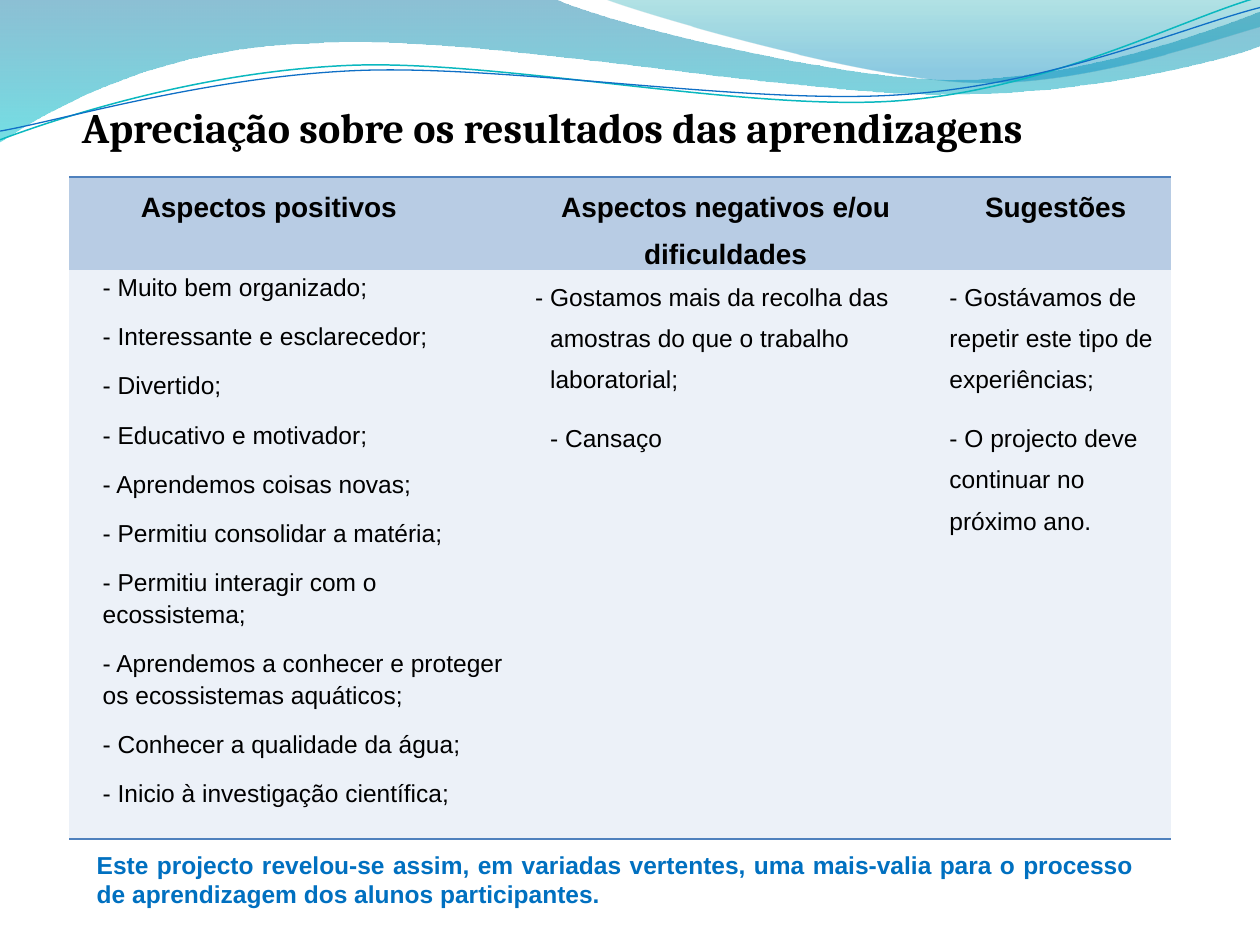
from dataclasses import dataclass

from lxml.etree import SubElement
from pptx import Presentation
from pptx.dml.color import RGBColor as RGB
from pptx.enum.text import MSO_ANCHOR as Anchor, MSO_AUTO_SIZE as AutoSize, PP_ALIGN as Align
from pptx.oxml import parse_xml
from pptx.oxml.ns import nsdecls, qn
from pptx.util import Pt


@dataclass(frozen=True)
class Theme:
    heading_font: str = "Cambria"
    body_font: str = "Arial"
    title_size: int = 24
    header_size: int = 16
    body_size: int = 14
    text: str = "000000"
    closing: str = "0070C0"
    rule: str = "4F81BD"
    header_fill: str = "B8CCE4"
    body_fill: str = "ECF1F8"
    wide_wave: tuple = ((0, "0074A1", 45), (1, "00C6CF", 55))
    right_wave: tuple = ((0, "00A1A9", 30), (0.8, "008BBF", 45))
    teal_line: str = "0AB8BF"
    blue_line: str = "0F6FC6"


THEME = Theme()

WIDE_WAVE = [
    (0, 0), (316.8, -0.7),
    (342.7, 12.2, 478.1, 45.4, 545.8, 45.4), (614.2, 45.4, 689.8, 18.7, 720, 6.5),
    (720.7, 25.9), (707.8, 31.7, 626.4, 54.7, 537.1, 54),
    (447.8, 54, 275, 20.2, 185, 24.5), (92.9, 25.9, 33.1, 59.8, -0.7, 81.4),
]
RIGHT_WAVE = [
    (344.9, -0.7), (366.5, 7.9, 491, 44.6, 553.7, 46.8),
    (616.3, 49.7, 691.9, 23, 720, 15.1), (720, 0),
]
TEAL_LINE = [
    (0, 79.9), (34.6, 67, 113.8, 41, 199.4, 37.4),
    (284.4, 33.8, 427, 64.1, 513.4, 57.6), (599.8, 51.1, 675.4, 10.8, 718.6, -1.4),
]
BLUE_LINE = [
    (0, 74.9), (33.8, 69.1, 118.1, 43.9, 203.8, 40.3),
    (290.2, 36.7, 429.8, 60.5, 516.2, 54), (601.9, 48.2, 677.5, 15.1, 720, 4.3),
]

COLUMN_WIDTHS = (261.3, 228.2, 140.3)
ROW_HEIGHTS = (53, 325)
HEADERS = (
    ("Aspectos positivos", Align.LEFT, 36),
    ("Aspectos negativos e/ou dificuldades", Align.CENTER, 0),
    ("Sugestões", Align.CENTER, 8.6),
)
POSITIVES = [
    "- Muito bem organizado;",
    "- Interessante e esclarecedor;",
    "- Divertido;",
    "- Educativo e motivador;",
    "- Aprendemos coisas novas;",
    "- Permitiu consolidar a matéria;",
    "- Permitiu interagir com o ecossistema;",
    "- Aprendemos a conhecer e proteger os ecossistemas aquáticos;",
    "- Conhecer a qualidade da água;",
    "- Inicio à investigação científica;",
]
NEGATIVES = [
    "Gostamos mais da recolha das amostras do que o trabalho laboratorial;",
    "- Cansaço",
]
SUGGESTIONS = [
    "- Gostávamos de repetir este tipo de experiências;",
    "- O projecto deve continuar no próximo ano.",
]
BODY = ((POSITIVES, 14.2, 1.15), (NEGATIVES, 8.6, 1.5), (SUGGESTIONS, 8.6, 1.5))


def add_outline(slide, outline, close):
    """Draw a freeform of corners and cubic curves without a shadow."""
    start, *others = [
        (Pt(x), Pt(y)) for segment in outline for x, y in zip(segment[::2], segment[1::2])]
    builder = slide.shapes.build_freeform(*start)
    builder.add_line_segments(others, close=close)
    shape = builder.convert_to_shape()
    shape.shadow.inherit = False
    lines = iter(list(shape._element.iter(qn("a:lnTo"))))
    for segment in outline[1:]:
        first = next(lines)
        if len(segment) == 6:
            first.tag = qn("a:cubicBezTo")
            for line in (next(lines), next(lines)):
                first.append(line[0])
                line.getparent().remove(line)
    return shape


def add_wave(slide, outline, stops):
    """Draw a wave with a translucent downward gradient."""
    shape = add_outline(slide, outline, close=True)
    shape.line.fill.background()
    shape.fill.gradient()
    shape.fill.gradient_angle = 270
    for stop, (position, color, _) in zip(shape.fill.gradient_stops, stops):
        stop.position = position
        stop.color.rgb = RGB.from_string(color)
    colors = shape._element.spPr.iter(qn("a:srgbClr"))
    for element, (_, _, opacity) in zip(colors, stops):
        SubElement(element, qn("a:alpha"), val=str(opacity * 1000))


def add_wave_line(slide, outline, color, width):
    """Draw a thin curved line."""
    shape = add_outline(slide, outline, close=False)
    shape.fill.background()
    shape.line.color.rgb = RGB.from_string(color)
    shape.line.width = Pt(width)


def style(paragraph, size, color=THEME.text, bold=False, name=THEME.body_font, align=Align.LEFT):
    """Set the font and alignment of a paragraph."""
    paragraph.alignment = align
    font = paragraph.font
    font.name, font.size, font.bold = name, Pt(size), bold
    font.color.rgb = RGB.from_string(color)


def add_title(slide, text):
    """Place the title above the table and in front of the waves."""
    title = slide.shapes.title
    title.left, title.top, title.width, title.height = Pt(39.6), Pt(54.2), Pt(671.8), Pt(42)
    frame = title.text_frame
    frame.text = text
    frame.auto_size = AutoSize.NONE
    frame.vertical_anchor = Anchor.TOP
    paragraph = frame.paragraphs[0]
    paragraph.space_before = Pt(4.8)
    style(paragraph, THEME.title_size, bold=True, name=THEME.heading_font)
    slide.shapes._spTree.append(title._element)


def add_dash_bullet(paragraph, indent):
    """Hang a dash of the body size before a paragraph."""
    properties = paragraph._p.get_or_add_pPr()
    properties.set("indent", str(-Pt(indent)))
    SubElement(properties, qn("a:buFont"), typeface=THEME.body_font)
    SubElement(properties, qn("a:buChar"), char="-")
    font = paragraph.runs[0].font
    font.name, font.size = THEME.body_font, Pt(THEME.body_size)


def fill_cell(cell, texts, indent, spacing, fill, border, **font):
    """Write a cell's paragraphs and set its fill and one border."""
    cell.margin_left, cell.margin_right = Pt(5), Pt(5.4)
    cell.margin_top = cell.margin_bottom = 0
    cell.fill.solid()
    cell.fill.fore_color.rgb = RGB.from_string(fill)
    cell._tc.get_or_add_tcPr().insert(0, parse_xml(
        f'<a:{border} {nsdecls("a")} w="{Pt(1)}"><a:solidFill>'
        f'<a:srgbClr val="{THEME.rule}"/></a:solidFill></a:{border}>'))
    cell.text = "\n".join(texts)
    for paragraph in cell.text_frame.paragraphs:
        paragraph._p.get_or_add_pPr().set("marL", str(Pt(indent)))
        if paragraph.text == NEGATIVES[0]:
            add_dash_bullet(paragraph, indent)
        paragraph.line_spacing = spacing
        paragraph.space_after = Pt(10)
        style(paragraph, **font)


def add_review_table(slide):
    """Add the three-column table of opinions."""
    frame = slide.shapes.add_table(
        2, 3, Pt(39.5), Pt(101.1), Pt(sum(COLUMN_WIDTHS)), Pt(sum(ROW_HEIGHTS)))
    table = frame.table
    table._tbl.tblPr.find(qn("a:tableStyleId")).text = "{2D5ABB26-0587-4C30-8999-92F81FD0307C}"
    table.horz_banding = False
    for column, width in zip(table.columns, COLUMN_WIDTHS):
        column.width = Pt(width)
    for row, height in zip(table.rows, ROW_HEIGHTS):
        row.height = Pt(height)
    for index, (text, align, indent) in enumerate(HEADERS):
        fill_cell(table.cell(0, index), [text], indent, 1.5, THEME.header_fill, "lnT",
                  size=THEME.header_size, bold=True, align=align)
    for index, (texts, indent, spacing) in enumerate(BODY):
        fill_cell(table.cell(1, index), texts, indent, spacing, THEME.body_fill, "lnB",
                  size=THEME.body_size)


def add_closing(slide, text):
    """Add the justified closing statement."""
    frame = slide.shapes.add_textbox(Pt(48.2), Pt(482), Pt(607), Pt(41)).text_frame
    frame.word_wrap = True
    frame.vertical_anchor = Anchor.MIDDLE
    frame.text = text
    style(frame.paragraphs[0], THEME.body_size, THEME.closing, bold=True, align=Align.JUSTIFY)


def main():
    """Build and save the slide."""
    presentation = Presentation()
    presentation.slide_width, presentation.slide_height = Pt(720), Pt(540)
    slide = presentation.slides.add_slide(presentation.slide_layouts[5])
    add_wave(slide, WIDE_WAVE, THEME.wide_wave)
    add_wave(slide, RIGHT_WAVE, THEME.right_wave)
    add_wave_line(slide, TEAL_LINE, THEME.teal_line, 0.85)
    add_wave_line(slide, BLUE_LINE, THEME.blue_line, 0.75)
    add_title(slide, "Apreciação sobre os resultados das aprendizagens")
    add_review_table(slide)
    add_closing(slide, "Este projecto revelou-se assim, em variadas vertentes, uma mais-valia "
                       "para o processo de aprendizagem dos alunos participantes.")
    presentation.save("out.pptx")


if __name__ == "__main__":
    main()
